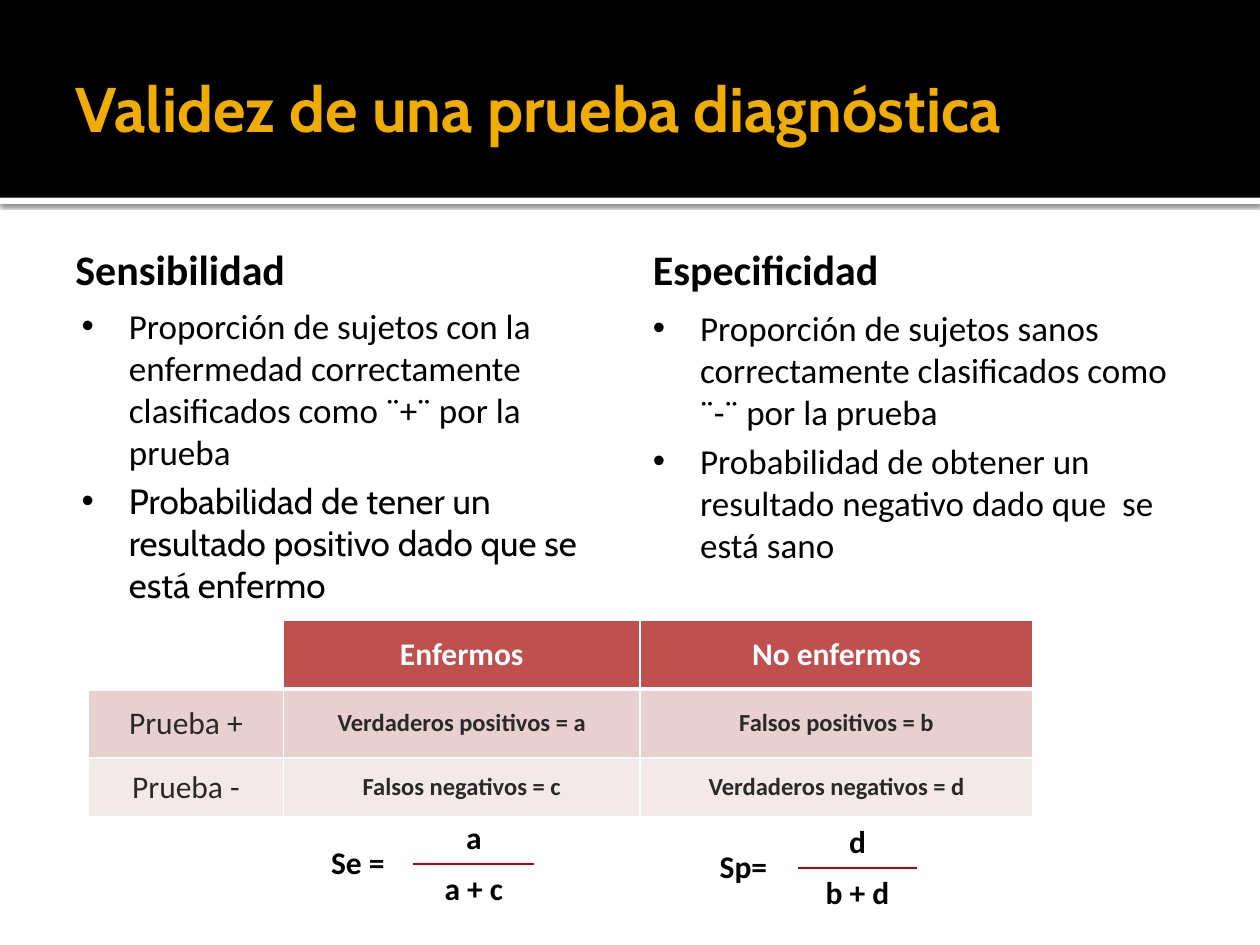
"""Build the slide on the validity of a diagnostic test."""
from lxml.etree import SubElement
from pptx import Presentation
from pptx.dml.color import RGBColor
from pptx.enum.shapes import MSO_SHAPE as SHAPE
from pptx.enum.text import MSO_ANCHOR as ANCHOR, PP_ALIGN as ALIGN
from pptx.oxml import parse_xml
from pptx.oxml.ns import nsdecls, qn
from pptx.util import Pt

BLACK = RGBColor(0x00, 0x00, 0x00)
WHITE = RGBColor(0xFF, 0xFF, 0xFF)
GOLD = RGBColor(0xF0, 0xAD, 0x00)
RED = RGBColor(0xC0, 0x50, 0x4D)
DARK_RED = RGBColor(0xC0, 0x00, 0x00)
PINK = RGBColor(0xE8, 0xD0, 0xD0)
PALE = RGBColor(0xF4, 0xE9, 0xE9)
GREY = RGBColor(0x29, 0x29, 0x29)
NO_STYLE = "{2D5ABB26-0587-4C30-8999-92F81FD0307C}"


def write(p, text, **font):
    r = p.add_run()
    r.text = text
    r.font.color.rgb = font.pop("color", BLACK)
    for name, value in ({"name": "Calibri"} | font).items():
        setattr(r.font, name, value)


def set_cell(cell, text, borders, fill=None, **font):
    pr = cell._tc.get_or_add_tcPr()
    for side, (color, width) in borders.items():
        ln = SubElement(pr, qn(f"a:ln{side}"), w=str(Pt(width)))
        SubElement(SubElement(ln, qn("a:solidFill")), qn("a:srgbClr"), val=str(color))
    if fill is None:
        cell.fill.background()
    else:
        cell.fill.solid()
        cell.fill.fore_color.rgb = fill
    cell.vertical_anchor = ANCHOR.MIDDLE
    if text:
        p = cell.text_frame.paragraphs[0]
        p.alignment = ALIGN.CENTER
        write(p, text, **font)


prs = Presentation()
prs.slide_width, prs.slide_height = Pt(720), Pt(540)
s = prs.slides.add_slide(prs.slide_layouts[6])

for top, height, color in [(113, 3.6, WHITE), (0, 113, BLACK)]:
    sp = s.shapes.add_shape(SHAPE.RECTANGLE, Pt(0), Pt(top), Pt(720), Pt(height))
    sp.shadow.inherit = False
    sp.fill.solid()
    sp.fill.fore_color.rgb = color
    sp.line.fill.background()
    if color == WHITE:
        sp._element.spPr.find(qn("a:effectLst")).append(parse_xml(
            f'<a:outerShdw {nsdecls("a")} blurRad="{Pt(2.5)}" dist="{Pt(0.8)}" dir="5400000" '
            'algn="tl" rotWithShape="0"><a:srgbClr val="000000"><a:alpha val="60000"/>'
            '</a:srgbClr></a:outerShdw>'))

headings = [
    ("Validez de una prueba diagnóstica", (36, 12.2, 648, 98.6), ANCHOR.MIDDLE,
     {"size": Pt(36), "name": "Cabin", "color": GOLD}),
    ("Sensibilidad", (36, 121, 318, 50.4), ANCHOR.BOTTOM, {"size": Pt(24)}),
    ("Especificidad", (366, 121, 318, 50.4), ANCHOR.BOTTOM, {"size": Pt(24)}),
]
for text, box, anchor, font in headings:
    tf = s.shapes.add_textbox(*map(Pt, box)).text_frame
    tf.word_wrap = True
    tf.vertical_anchor = anchor
    write(tf.paragraphs[0], text, bold=True, **font)

bodies = [
    ((366, 171.4, 318, 311), [
        ("Proporción de sujetos sanos correctamente clasificados como ¨-¨ por la prueba", "Calibri"),
        ("Probabilidad de obtener un resultado negativo dado que  se está sano", "Calibri")]),
    ((39.6, 170.6, 318, 311), [
        ("Proporción de sujetos con la enfermedad correctamente clasificados como ¨+¨ por la prueba",
         "Calibri"),
        ("Probabilidad de tener un resultado positivo dado que se está enfermo", "Cabin")]),
]
for box, items in bodies:
    tf = s.shapes.add_textbox(*map(Pt, box)).text_frame
    tf.word_wrap = True
    for i, (text, name) in enumerate(items):
        p = tf.add_paragraph() if i else tf.paragraphs[0]
        pr = p._p.get_or_add_pPr()
        pr.set("marL", str(Pt(27)))
        pr.set("indent", str(Pt(-27)))
        SubElement(pr, qn("a:buFont"), typeface="Arial")
        SubElement(pr, qn("a:buChar"), char="•")
        if i:
            p.space_before = Pt(4)
        write(p, text, size=Pt(20), name=name)

counts = [
    ["", "Enfermos", "No enfermos"],
    ["Prueba +", "Verdaderos positivos = a", "Falsos positivos = b"],
    ["Prueba -", "Falsos negativos = c", "Verdaderos negativos = d"],
]
fractions = [["Se =", "a"], ["", "a + c"]], [["Sp=", "d"], ["", "b + d"]]
tables = [
    (counts, (50.6, 354.4), [111.4, 203.8, 224.6], [39.4, 39.4, 33.6]),
    (fractions[0], (172.8, 464.4), [63.4, 69.2], [29.4, 28.8]),
    (fractions[1], (393.8, 466.6), [62, 68.4], [29.4, 28.8]),
]
for rows, (left, top), widths, heights in tables:
    frame = s.shapes.add_table(len(rows), len(widths), Pt(left), Pt(top),
                               Pt(sum(widths)), Pt(sum(heights)))
    table = frame.table
    table.first_row = table.horz_banding = False
    table._tbl.tblPr.find(qn("a:tableStyleId")).text = NO_STYLE
    for col, width in zip(table.columns, widths):
        col.width = Pt(width)
    for row, height in zip(table.rows, heights):
        row.height = Pt(height)
    if rows is not counts:
        table.cell(0, 0).merge(table.cell(1, 0))
    for i, row in enumerate(rows):
        for j, text in enumerate(row):
            if rows is counts:
                borders = {side: (WHITE, 1) for side in "LRTB"}
                if i < 2:
                    borders["TB"[i == 0]] = (WHITE, 3)
                fill = WHITE if i == j == 0 else (RED, PINK, PALE)[i]
                font = {"size": Pt(14 if i and j else 18), "bold": j > 0,
                        "color": GREY if i else WHITE}
            else:
                borders = {"BT"[i]: (DARK_RED, 1.5)} if j else {}
                fill = None
                font = {"size": Pt(18), "bold": True}
            set_cell(table.cell(i, j), text, borders, fill, **font)

prs.save("out.pptx")
